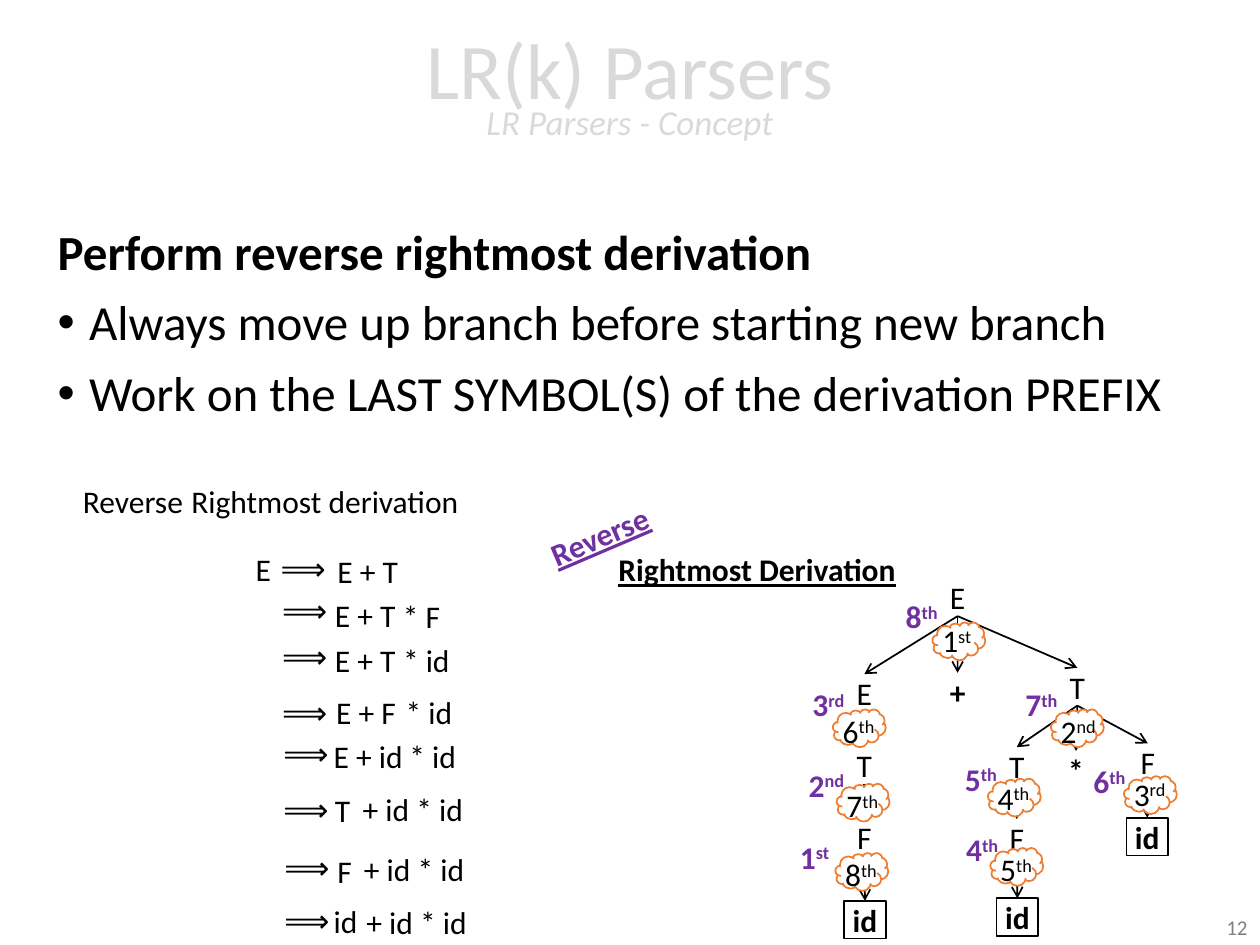
from dataclasses import dataclass

import pptx
import pptx.dml.color
import pptx.enum.shapes
import pptx.enum.text
import pptx.oxml
import pptx.oxml.ns
import pptx.util
from pptx.util import Inches

BLACK, WHITE, PURPLE, ORANGE = "000000", "FFFFFF", "7030A0", "ED7D31"
PALE, GRAY = "D9D9D9", "808080"
NODE_W, LEAF_W, NODE_H, LABEL_H = 0.42, 0.33, 0.3, 0.4
BOTTOM, TOP = 2, 0
ALIGN = pptx.enum.text.PP_ALIGN
SHAPE = pptx.enum.shapes.MSO_SHAPE


@dataclass
class Node:
    key: str
    text: str
    left: float
    top: float
    parent: str = ""
    bold: bool = False


@dataclass
class Step:
    """An ordinal beside the tree; label_shift places a cloud's text above the cloud."""
    number: str
    suffix: str
    left: float
    top: float
    width: float
    label_shift: float = 0


@dataclass
class Label:
    text: str
    left: float
    top: float
    width: float


NODES = [
    Node("root", "E", 7.39, 4.59),
    Node("left E", "E", 6.65, 5.35, "root"),
    Node("plus", "+", 7.39, 5.34, "root", True),
    Node("right T", "T", 8.34, 5.3, "root"),
    Node("left T", "T", 6.65, 5.92, "left E"),
    Node("left F", "F", 6.65, 6.49, "left T"),
    Node("left id", "id", 6.7, 7.15, "left F", True),
    Node("middle T", "T", 7.86, 5.93, "right T"),
    Node("times", "*", 8.33, 5.96, "right T", True),
    Node("right F", "F", 8.9, 5.9, "right T"),
    Node("middle F", "F", 7.86, 6.5, "middle T"),
    Node("middle id", "id", 7.91, 7.13, "middle F", True),
    Node("right id", "id", 8.94, 6.49, "right F", True),
]

FORWARD_STEPS = [
    Step("1", "st", 7.4, 4.94, 0.51, 0.06),
    Step("2", "nd", 8.34, 5.63, 0.56, 0.03),
    Step("3", "rd", 8.92, 6.16, 0.53, 0.06),
    Step("4", "th", 7.84, 6.18, 0.53, 0.05),
    Step("5", "th", 7.86, 6.73, 0.53, 0.03),
    Step("6", "th", 6.61, 5.63, 0.53, 0.03),
    Step("7", "th", 6.64, 6.22, 0.53, 0.03),
    Step("8", "th", 6.63, 6.77, 0.53, 0.03),
]

REVERSE_STEPS = [
    Step("1", "st", 6.25, 6.6, 0.51),
    Step("2", "nd", 6.32, 6.03, 0.57),
    Step("3", "rd", 6.35, 5.39, 0.54),
    Step("4", "th", 7.57, 6.54, 0.54),
    Step("5", "th", 7.56, 5.98, 0.54),
    Step("6", "th", 8.58, 6.0, 0.54),
    Step("7", "th", 8.04, 5.39, 0.54),
    Step("8", "th", 7.09, 4.69, 0.54),
]

ARROWS = [(2.13, 4.31), (2.14, 4.64), (2.14, 5.01), (2.14, 5.45),
          (2.15, 5.78), (2.15, 6.22), (2.16, 6.68), (2.16, 7.1)]

DERIVATION = [
    Label("Reverse", 0.56, 3.78, 1.0), Label("Rightmost derivation", 1.42, 3.78, 2.35),
    Label("E", 1.93, 4.32, 0.32), Label("E + T", 2.58, 4.33, 0.69),
    Label("E + T", 2.56, 4.68, 0.69), Label("* F", 3.1, 4.69, 0.5),
    Label("E + T", 2.56, 5.04, 0.69), Label("* id", 3.1, 5.04, 0.58),
    Label("E + F", 2.57, 5.45, 0.68), Label("* id", 3.12, 5.45, 0.58),
    Label("E + id", 2.55, 5.8, 0.76), Label("* id", 3.15, 5.8, 0.58),
    Label("T", 2.56, 6.23, 0.32), Label("+ id * id", 2.78, 6.22, 1.01),
    Label("F", 2.58, 6.71, 0.32), Label("+ id * id", 2.79, 6.7, 1.01),
    Label("id", 2.55, 7.11, 0.39), Label("+ id * id", 2.81, 7.12, 1.01),
]


def rgb(value: str):
    return pptx.dml.color.RGBColor.from_string(value)


def add_run(paragraph, text: str, size: float = 18, color: str = BLACK, bold: bool = False,
            italic: bool = False, underline: bool = False, raised: bool = False):
    run = paragraph.add_run()
    run.text = text
    font = run.font
    font.name, font.size, font.color.rgb = "Calibri", pptx.util.Pt(size), rgb(color)
    font.bold, font.italic, font.underline = bold, italic, underline
    if raised:
        run._r.get_or_add_rPr().set("baseline", "30000")


def add_box(shapes, left: float, top: float, width: float, height: float):
    box = shapes.add_textbox(Inches(left), Inches(top), Inches(width), Inches(height))
    box.text_frame.word_wrap = True
    return box


def add_label(shapes, label: Label, **style):
    """Add a one-line box that fits its text."""
    box = add_box(shapes, label.left, label.top, label.width, LABEL_H)
    box.text_frame.word_wrap = False
    box.text_frame.auto_size = pptx.enum.text.MSO_AUTO_SIZE.SHAPE_TO_FIT_TEXT
    add_run(box.text_frame.paragraphs[0], label.text, **style)
    return box


def add_outlined(shapes, kind, left: float, top: float, width: float, color: str):
    shape = shapes.add_shape(kind, Inches(left), Inches(top), Inches(width), Inches(NODE_H))
    shape.shadow.inherit = False
    shape.fill.solid()
    shape.fill.fore_color.rgb = rgb(WHITE)
    shape.line.color.rgb = rgb(color)
    shape.line.width = pptx.util.Pt(1)
    return shape


def add_node(shapes, node: Node):
    if node.text == "id":
        shape = add_outlined(shapes, SHAPE.RECTANGLE, node.left, node.top, LEAF_W, BLACK)
    else:
        shape = add_box(shapes, node.left, node.top, NODE_W, NODE_H)
    frame = shape.text_frame
    frame.margin_left = frame.margin_right = frame.margin_top = frame.margin_bottom = 0
    frame.vertical_anchor = pptx.enum.text.MSO_ANCHOR.MIDDLE
    frame.paragraphs[0].alignment = ALIGN.CENTER
    add_run(frame.paragraphs[0], node.text, bold=node.bold)
    return shape


def add_branch(shapes, parent, child):
    branch = shapes.add_connector(pptx.enum.shapes.MSO_CONNECTOR.STRAIGHT, 0, 0, 0, 0)
    branch.begin_connect(parent, BOTTOM)
    branch.end_connect(child, TOP)
    branch.line.color.rgb = rgb(BLACK)
    branch.line.width = pptx.util.Pt(1)
    tail = pptx.oxml.parse_xml(f'<a:tailEnd {pptx.oxml.ns.nsdecls("a")} type="arrow"/>')
    branch.line._get_or_add_ln().append(tail)
    effects = pptx.oxml.parse_xml(f'<a:effectLst {pptx.oxml.ns.nsdecls("a")}/>')
    branch._element.spPr.append(effects)


def add_step(shapes, step: Step, color: str, bold: bool = False):
    label = Label(step.number, step.left, step.top, step.width)
    box = add_label(shapes, label, color=color, bold=bold)
    add_run(box.text_frame.paragraphs[0], step.suffix, color=color, bold=bold, raised=True)


def add_cloud_step(shapes, step: Step):
    group = shapes.add_group_shape().shapes
    add_outlined(group, SHAPE.CLOUD, step.left, step.top, NODE_W, ORANGE)
    add_step(group, Step(step.number, step.suffix, step.left - 0.02,
                         step.top - step.label_shift, step.width), BLACK)


def add_headings(shapes):
    title = add_box(shapes, 0, 0.02, 10, 1.45).text_frame
    title.vertical_anchor = pptx.enum.text.MSO_ANCHOR.MIDDLE
    heading = title.paragraphs[0]
    heading.alignment, heading.line_spacing = ALIGN.CENTER, 0.7
    add_run(heading, "LR(k) Parsers", 45, PALE)
    heading.add_line_break()
    add_run(heading, "LR Parsers - Concept", 20, PALE, italic=True)

    body = add_box(shapes, 0.36, 1.76, 9.07, 2.58).text_frame
    points = ["Perform reverse rightmost derivation",
              "Always move up branch before starting new branch",
              "Work on the LAST SYMBOL(S) of the derivation PREFIX"]
    for index, point in enumerate(points):
        paragraph = body.add_paragraph() if index else body.paragraphs[0]
        paragraph.line_spacing, paragraph.space_before = 0.9, pptx.util.Pt(10)
        add_run(paragraph, point, 28, bold=index == 0)
        if index:
            props = paragraph._p.get_or_add_pPr()
            props.set("marL", str(Inches(0.25)))
            props.set("indent", str(Inches(-0.25)))
            for tag in ('buFont {} typeface="Arial"', 'buChar {} char="•"'):
                xml = tag.format(pptx.oxml.ns.nsdecls("a"))
                props.append(pptx.oxml.parse_xml(f"<a:{xml}/>"))

    page_number = add_box(shapes, 7.75, 7.21, 2.25, 0.28).text_frame.paragraphs[0]
    page_number.alignment = ALIGN.RIGHT
    add_run(page_number, "12", 12, GRAY)


def add_tree(shapes):
    drawn = {node.key: add_node(shapes, node) for node in NODES}
    for node in NODES:
        if node.parent:
            add_branch(shapes, drawn[node.parent], drawn[node.key])
    for step in FORWARD_STEPS:
        add_cloud_step(shapes, step)
    for step in REVERSE_STEPS:
        add_step(shapes, step, PURPLE, bold=True)
    add_label(shapes, Label("Rightmost Derivation", 4.81, 4.32, 2.42), bold=True, underline=True)
    reverse = add_label(shapes, Label("Reverse", 4.25, 4.05, 1.02),
                        color=PURPLE, bold=True, underline=True)
    reverse.rotation = 336.9


def main():
    deck = pptx.Presentation()
    deck.slide_width, deck.slide_height = Inches(10), Inches(7.5)
    shapes = deck.slides.add_slide(deck.slide_layouts[6]).shapes
    add_headings(shapes)
    add_tree(shapes)
    for left, top in ARROWS:
        add_label(shapes, Label("⟹", left, top, 0.5))
    for label in DERIVATION:
        add_label(shapes, label)
    deck.save("out.pptx")


if __name__ == "__main__":
    main()
